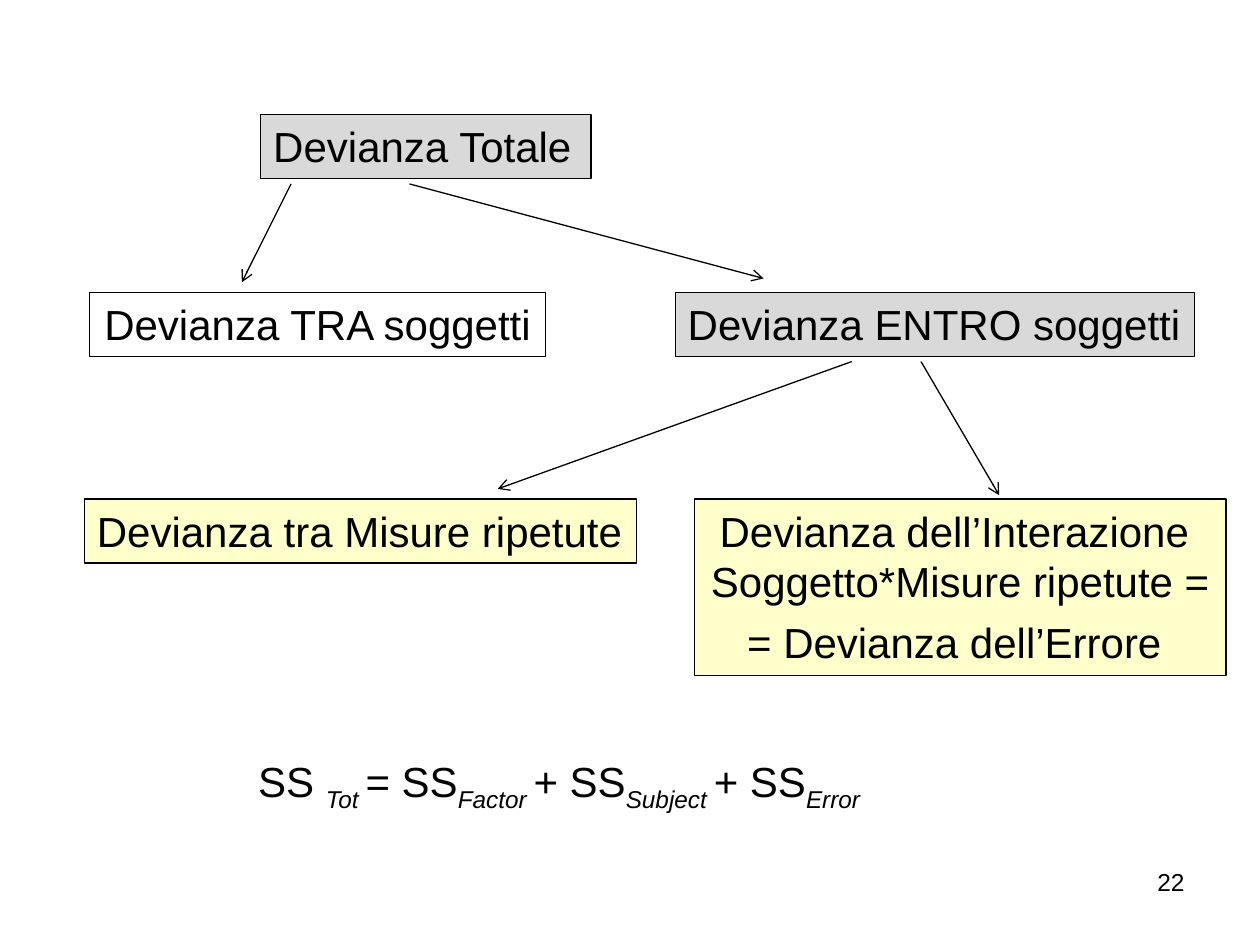
import pptx
import pptx.dml.color
import pptx.enum.shapes
import pptx.enum.text
import pptx.oxml.ns
import pptx.util
from lxml import etree
from pptx.util import Inches

Align = pptx.enum.text.PP_ALIGN
AutoSize = pptx.enum.text.MSO_AUTO_SIZE
Color = pptx.dml.color.RGBColor.from_string
qn = pptx.oxml.ns.qn

THEME = {
    "font": "Arial",
    "ink": Color("000000"),
    "gray": Color("D9D9D9"),
    "yellow": Color("FFFFCC"),
    "body": pptx.util.Pt(24),
    "number": pptx.util.Pt(14),
    "line": pptx.util.Pt(0.75),
}


def add_span(para, text, size=THEME["body"], subscript=False):
    """Append a run; a subscript is also italic."""
    span = para.add_run()
    span.text = text
    formats = {"name": THEME["font"], "size": size, "italic": subscript}
    for name, value in formats.items():
        setattr(span.font, name, value)
    span.font.color.rgb = THEME["ink"]
    if subscript:
        span._r.get_or_add_rPr().set("baseline", "-25000")


def add_arrow(shapes, start, end):
    arrow = shapes.add_connector(
        pptx.enum.shapes.MSO_CONNECTOR.STRAIGHT, *map(Inches, start + end))
    arrow.line.color.rgb = THEME["ink"]
    arrow.line.width = THEME["line"]
    tail = etree.SubElement(arrow.line._get_or_add_ln(), qn("a:tailEnd"))
    tail.set("type", "arrow")
    etree.SubElement(arrow._element.spPr, qn("a:effectLst"))


deck = pptx.Presentation()
deck.slide_width, deck.slide_height = Inches(10), Inches(7.5)
page = deck.slides.add_slide(deck.slide_layouts[6])
shapes = page.shapes

# Deviance tree: left, top, width, height, fill, alignment, paragraphs of lines
row_height = 0.51
nodes = [
    (2.07, 0.91, 2.62, row_height, "gray", Align.LEFT, [["Devianza Totale"]]),
    (0.71, 2.32, 3.62, row_height, None, Align.CENTER,
     [["Devianza TRA soggetti"]]),
    (5.36, 2.32, 4.12, row_height, "gray", Align.LEFT,
     [["Devianza ENTRO soggetti"]]),
    (0.67, 3.96, 4.38, row_height, "yellow", Align.LEFT,
     [["Devianza tra Misure ripetute"]]),
    (5.51, 3.96, 4.22, 1.4, "yellow", Align.CENTER,
     [["Devianza dell’Interazione ", "Soggetto*Misure ripetute ="],
      ["= Devianza dell’Errore "]]),
]
for left, top, width, height, fill, alignment, paragraphs in nodes:
    box = shapes.add_shape(
        pptx.enum.shapes.MSO_SHAPE.RECTANGLE,
        *map(Inches, (left, top, width, height)))
    box.shadow.inherit = False
    if fill:
        box.fill.solid()
        box.fill.fore_color.rgb = THEME[fill]
    else:
        box.fill.background()
    box.line.color.rgb = THEME["ink"]
    box.line.width = THEME["line"]
    frame = box.text_frame
    frame.word_wrap = len(paragraphs) > 1
    frame.auto_size = AutoSize.SHAPE_TO_FIT_TEXT
    frame.vertical_anchor = pptx.enum.text.MSO_ANCHOR.TOP
    for index, lines in enumerate(paragraphs):
        para = frame.add_paragraph() if index else frame.paragraphs[0]
        para.alignment = alignment
        if len(paragraphs) > 1:
            para.space_after = pptx.util.Pt(6)
        for number, line in enumerate(lines):
            if number:
                para.add_line_break()
            add_span(para, line)

for start, end in [
    ((3.25, 1.46), (6.06, 2.21)),
    ((2.31, 1.46), (1.92, 2.24)),
    ((6.76, 2.87), (3.95, 3.88)),
    ((7.31, 2.87), (7.93, 3.93)),
]:
    add_arrow(shapes, start, end)

# Sum of squares formula: each term is followed by its subscript
formula = shapes.add_textbox(
    Inches(1.95), Inches(5.95), Inches(5.49), Inches(row_height))
formula.text_frame.word_wrap = True
formula.text_frame.auto_size = AutoSize.SHAPE_TO_FIT_TEXT
para = formula.text_frame.paragraphs[0]
for term, subscript in [("SS ", "Tot "), ("= SS", "Factor "),
                        ("+ SS", "Subject "), ("+ SS", "Error")]:
    add_span(para, term)
    add_span(para, subscript, subscript=True)

page_number = shapes.add_textbox(
    Inches(8.54), Inches(6.83), Inches(0.96), Inches(0.52))
page_number.text_frame.word_wrap = True
para = page_number.text_frame.paragraphs[0]
para.alignment = Align.RIGHT
add_span(para, "22", THEME["number"])

deck.save("out.pptx")
